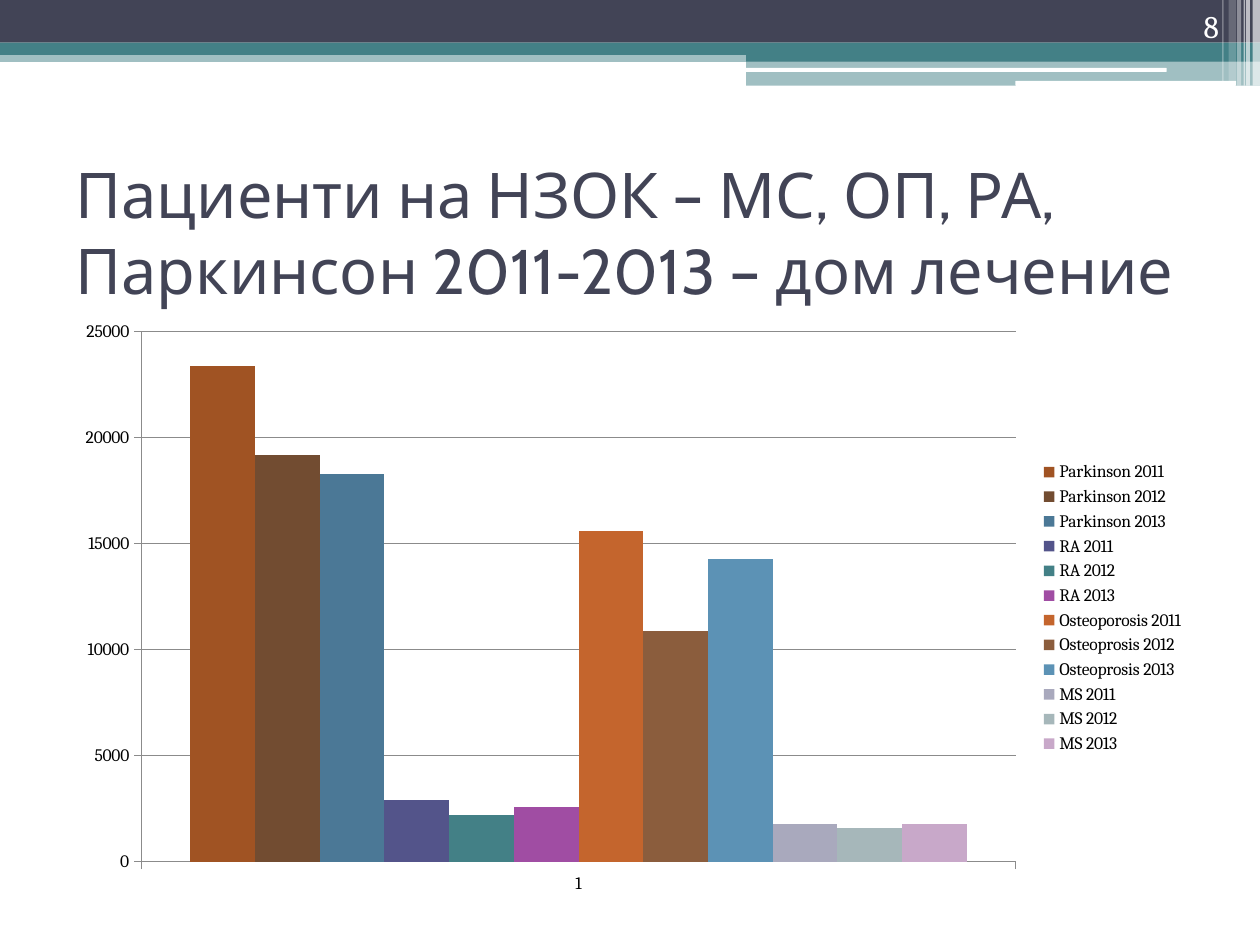
from dataclasses import dataclass

from lxml import etree
from pptx import Presentation
from pptx.chart import data as cd
from pptx.dml import color as col
from pptx.enum import chart as ch, shapes as sh, text as tx
from pptx.oxml import ns
from pptx.util import Cm, Pt


@dataclass(frozen=True)
class Theme:
    """Colours, fonts and type sizes of the slide."""
    dark: str = "424456"
    teal: str = "438086"
    white: str = "FFFFFF"
    black: str = "000000"
    grid: str = "8B8B8B"
    head: str = "Cabin"
    body: str = "Cambria"
    big: int = 36
    mid: int = 18
    small: int = 10


T = Theme()
RECT = sh.MSO_SHAPE.RECTANGLE
ROUND = sh.MSO_SHAPE.ROUNDED_RECTANGLE

BARS = [
    ("Parkinson 2011", 23400, "A05323"),
    ("Parkinson 2012", 19200, "724C31"),
    ("Parkinson 2013", 18300, "4B7896"),
    ("RA 2011", 2900, "53548A"),
    ("RA 2012", 2200, "438086"),
    ("RA 2013", 2600, "A04DA3"),
    ("Osteoporosis 2011", 15600, "C4652D"),
    ("Osteoprosis 2012", 10900, "8B5D3D"),
    ("Osteoprosis 2013", 14300, "5C92B5"),
    ("MS 2011", 1800, "A9A9BD"),
    ("MS 2012", 1600, "A6B7BA"),
    ("MS 2013", 1800, "C8A8C9"),
]


def put(obj, vals):
    """Set each attribute of obj named in vals."""
    for key, val in vals.items():
        setattr(obj, key, val)


def rgb(code):
    """Turn a hex code into a colour."""
    return col.RGBColor.from_string(code)


def style(font, size, name, code):
    """Give a font its size, face and colour."""
    put(font, {"size": Pt(size), "name": name, "bold": False})
    font.color.rgb = rgb(code)


def paint(fill, code, alpha=100):
    """Fill with a solid colour at the given opacity in percent."""
    fill.solid()
    fill.fore_color.rgb = rgb(code)
    if alpha < 100:
        clr = fill._xPr.find(".//" + ns.qn("a:srgbClr"))
        etree.SubElement(clr, ns.qn("a:alpha"), val=str(alpha * 1000))


def bar(slide, box, code, alpha=100, kind=RECT):
    """Add a plain bar without outline or shadow."""
    shape = slide.shapes.add_shape(kind, *map(Cm, box))
    shape.shadow.inherit = False
    shape.line.fill.background()
    paint(shape.fill, code, alpha)


def banner(slide, box):
    """Draw the layered bands across the top."""
    x, y, w, h = box
    half = x + 15.04
    rest = w - 15.04
    bar(slide, (x, y + 1.02, w, 0.23), T.teal, 50)
    bar(slide, (x, y, w, 0.86), T.dark)
    bar(slide, (x, y + 0.86, w, 0.25), T.teal)
    bar(slide, (half, y + 0.99, rest, 0.25), T.teal)
    bar(slide, (half, y + 1.22, rest, h - 1.22), T.teal, 50)
    bar(slide, (half - 0.03, y + 1.37, 8.51, 0.08), T.white, kind=ROUND)
    bar(slide, (x + 20.47, y + 1.63, 4.45, 0.1), T.white, kind=ROUND)


def stripes(slide, box):
    """Draw the pale upright stripes at the right edge."""
    x, y, w, h = box
    for left, wide, cut, alpha in [
        (0.61, 0.15, 0, 65), (0.48, 0.08, 0, 65), (0.43, 0.03, 0, 60),
        (0.3, 0.08, 0, 40), (0.13, 0.15, 0.1, 20), (0, 0.03, 0.1, 30),
    ]:
        bar(slide, (x + left, y, wide, h - cut), T.white, alpha)


def place(shape, box):
    """Move and size a shape to the box."""
    put(shape, dict(zip(("left", "top", "width", "height"), map(Cm, box))))


def title(slide, box):
    """Fill the title placeholder."""
    shape = slide.shapes.title
    place(shape, box)
    frame = shape.text_frame
    frame.text = "Пациенти на НЗОК – МС, ОП, РА, Паркинсон 2011-2013 – дом лечение"
    put(frame, {"vertical_anchor": tx.MSO_ANCHOR.MIDDLE, "word_wrap": True,
                "auto_size": tx.MSO_AUTO_SIZE.NONE})
    para = frame.paragraphs[0]
    para.alignment = tx.PP_ALIGN.LEFT
    style(para.runs[0].font, T.big, T.head, T.dark)


def number(slide, box):
    """Write the page number."""
    frame = slide.shapes.add_textbox(*map(Cm, box)).text_frame
    frame.text = "8"
    put(frame, {"vertical_anchor": tx.MSO_ANCHOR.BOTTOM, "word_wrap": True})
    para = frame.paragraphs[0]
    para.alignment = tx.PP_ALIGN.RIGHT
    style(para.runs[0].font, T.mid, T.body, T.white)


def graph(slide, box):
    """Add the column chart of patients by disease and year."""
    data = cd.CategoryChartData()
    data.categories = ["1"]
    for name, val, _ in BARS:
        data.add_series(name, [val])
    kind = ch.XL_CHART_TYPE.COLUMN_CLUSTERED
    chart = slide.shapes.add_chart(kind, *map(Cm, box), data).chart
    style(chart.font, T.small, T.body, T.black)
    put(chart, {"has_title": False, "has_legend": True})
    put(chart.legend, {"position": ch.XL_LEGEND_POSITION.RIGHT,
                       "include_in_layout": False})
    plot = chart.plots[0]
    put(plot, {"gap_width": 150, "vary_by_categories": False})
    for item, (_, _, code) in zip(plot.series, BARS):
        item.invert_if_negative = False
        paint(item.format.fill, code)
    axis = chart.value_axis
    put(axis, {"minimum_scale": 0, "maximum_scale": 25000, "major_unit": 5000,
               "has_major_gridlines": True})
    lines = [axis.major_gridlines.format.line]
    for part in (axis, chart.category_axis):
        put(part, {"major_tick_mark": ch.XL_TICK_MARK.OUTSIDE,
                   "minor_tick_mark": ch.XL_TICK_MARK.NONE})
        lines.append(part.format.line)
    for line in lines:
        line.width = Pt(0.75)
        line.color.rgb = rgb(T.grid)


def main():
    """Build and save the slide."""
    deck = Presentation()
    put(deck, {"slide_width": Cm(25.4), "slide_height": Cm(19.05)})
    slide = deck.slides.add_slide(deck.slide_layouts[5])
    banner(slide, (0, 0, 25.4, 1.73))
    stripes(slide, (24.64, 0, 0.76, 1.73))
    title(slide, (1.27, 3.18, 22.86, 2.97))
    number(slide, (22.71, 0, 2.11, 1.02))
    graph(slide, (1.27, 6.25, 22.86, 12.01))
    deck.save("out.pptx")


if __name__ == "__main__":
    main()
